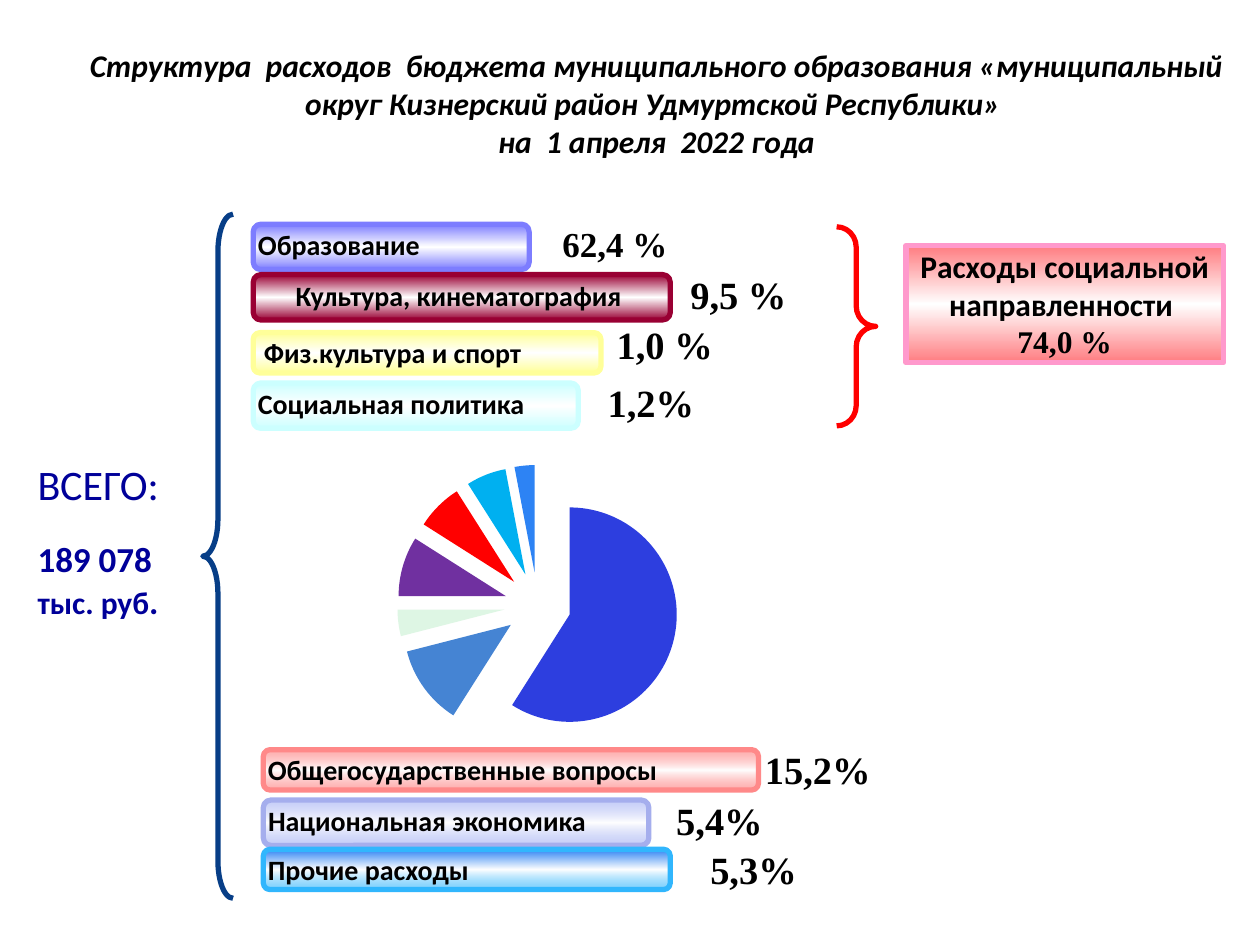
from lxml import etree
from pptx import Presentation
from pptx.chart.data import CategoryChartData
from pptx.dml.color import RGBColor
from pptx.enum.chart import XL_CHART_TYPE
from pptx.enum.shapes import MSO_SHAPE
from pptx.enum.text import MSO_ANCHOR, PP_ALIGN
from pptx.oxml import parse_xml
from pptx.oxml.ns import nsdecls, qn
from pptx.util import Inches, Pt

PIE = XL_CHART_TYPE.PIE
ROUNDED, RECTANGLE, BRACE = MSO_SHAPE.ROUNDED_RECTANGLE, MSO_SHAPE.RECTANGLE, MSO_SHAPE.LEFT_BRACE
LEFT, CENTER = PP_ALIGN.LEFT, PP_ALIGN.CENTER
TOP, MIDDLE = MSO_ANCHOR.TOP, MSO_ANCHOR.MIDDLE
SANS, SERIF = "Calibri", "Times New Roman"
BLACK, NAVY = "000000", "000099"

TITLE = ("Структура  расходов  бюджета муниципального образования «муниципальный округ "
         "Кизнерский район Удмуртской Республики» \vна  1 апреля  2022 года")

SLICES = [(59, "2D3EDF"), (12, "4584D3"), (0, "FFFF00"), (4, "DEF6E4"),
          (9, "7030A0"), (7, "FF0000"), (6, "00B0F0"), (3, "2D83F4")]
PLOT_AREA = {"x": 0.1, "y": 0.498, "w": 0.54, "h": 0.502}

# label, box, line colour, outer gradient stops as (colour, opacity %), alignment
BARS = [
    (" Физ.культура и спорт", (2.01, 2.64, 2.76, 0.32), "FFFF99",
     [("FFFF99", 100), ("FFFF99", 100)], LEFT),
    ("Социальная политика", (2.01, 3.04, 2.58, 0.36), "CCFFFF",
     [("CCFFFF", 100), ("CCFFFF", 100)], LEFT),
    ("Образование", (2.01, 1.78, 2.19, 0.36), "7D7DFF",
     [("7D7DFF", 100), ("7D7DFF", 100)], LEFT),
    ("Культура, кинематография ", (2.01, 2.18, 3.31, 0.36), "990033",
     [("990033", 100), ("990033", 100)], CENTER),
    ("Общегосударственные вопросы", (2.09, 5.95, 3.93, 0.32), "FF8989",
     [("FF7D7D", 63), ("FF7D7D", 63)], LEFT),
    ("Национальная экономика", (2.09, 6.35, 3.06, 0.36), "A5AEED",
     [("A4B1F4", 63), ("A4B1F4", 63)], LEFT),
    ("Прочие расходы", (2.09, 6.74, 3.23, 0.32), "31B6FD",
     [("2D83F4", 100), ("31B6FD", 63)], LEFT),
]

# text, box, size
SHARES = [
    ("62,4 %", (4.37, 1.62, 1.02, 0.63), 20),
    ("9,5 %", (4.92, 2.18, 1.88, 0.31), 22),
    ("1,0 %", (4.84, 2.58, 0.87, 0.31), 22),
    ("1,2%", (4.69, 3.04, 0.95, 0.31), 22),
    ("15,2%", (6.02, 5.95, 0.94, 0.31), 22),
    ("5,4%", (5.16, 6.35, 1.1, 0.31), 22),
    ("5,3%", (5.47, 6.74, 1.02, 0.31), 22),
]

# box, curve adjustment, rotation, colour
BRACES = [
    ((6.64, 1.8, 0.31, 1.58), 0.52, 180, "FF0000"),
    ((1.61, 1.7, 0.24, 5.43), 1.23, 0, "073E87"),
]


def color(value):
    return RGBColor.from_string(value)


def inches(box):
    return [Inches(value) for value in box]


def style(font, size, name=SANS, fill=BLACK, bold=True, italic=False):
    font.size, font.name, font.bold, font.italic = Pt(size), name, bold, italic
    font.color.rgb = color(fill)


def write(shape, text, size, align=LEFT, anchor=TOP, margins=(0.1, 0.05), wrap=True, **look):
    """Fill a shape with text, one paragraph per line, in a single look."""
    frame = shape.text_frame
    frame.text = text
    frame.word_wrap = wrap
    frame.vertical_anchor = anchor
    frame.margin_left = frame.margin_right = Inches(margins[0])
    frame.margin_top = frame.margin_bottom = Inches(margins[1])
    for paragraph in frame.paragraphs:
        paragraph.alignment = align
        for run in paragraph.runs:
            style(run.font, size, **look)
    return frame


def add_outlined(slide, kind, box, line):
    shape = slide.shapes.add_shape(kind, *inches(box))
    shape.shadow.inherit = False
    shape.line.color.rgb = color(line)
    shape.line.width = Pt(3)
    return shape


def fill_gradient(shape, outer):
    """Vertical gradient with white between the two outer stops."""
    first, last = outer
    gradient = parse_xml(f'<a:gradFill {nsdecls("a")} rotWithShape="1"><a:gsLst/>'
                         '<a:lin ang="5400000" scaled="1"/></a:gradFill>')
    for position, (value, opacity) in zip((0, 50, 100), (first, ("FFFFFF", 100), last)):
        stop = etree.SubElement(gradient[0], qn("a:gs"), pos=str(position * 1000))
        stop_color = etree.SubElement(stop, qn("a:srgbClr"), val=value)
        if opacity < 100:
            etree.SubElement(stop_color, qn("a:alpha"), val=str(opacity * 1000))
    shape._element.spPr.find(qn("a:prstGeom")).addnext(gradient)


def add_pie(slide):
    data = CategoryChartData()
    data.categories = [str(number + 1) for number in range(len(SLICES))]
    data.add_series("Series 1", [value for value, _ in SLICES])
    chart = slide.shapes.add_chart(PIE, *inches((1.8, 1.48, 6.67, 4.44)), data).chart
    chart.has_legend = chart.has_title = False
    style(chart.font, 18, bold=False)
    plot = chart.plots[0]
    plot.vary_by_categories = True
    series = plot.series[0]
    for index, (_, fill) in enumerate(SLICES):
        point_fill = series.points[index].format.fill
        point_fill.solid()
        point_fill.fore_color.rgb = color(fill)
    explosion = parse_xml(f'<c:explosion {nsdecls("c")} val="31"/>')
    series._element.find(qn("c:dPt")).addprevious(explosion)

    plot_area = chart._chartSpace.chart.plotArea
    for old_layout in plot_area.findall(qn("c:layout")):
        plot_area.remove(old_layout)
    layout = parse_xml(f'<c:layout {nsdecls("c")}><c:manualLayout>'
                       '<c:layoutTarget val="inner"/><c:xMode val="edge"/><c:yMode val="edge"/>'
                       '</c:manualLayout></c:layout>')
    for key, value in PLOT_AREA.items():
        etree.SubElement(layout[0], qn(f"c:{key}"), val=str(value))
    plot_area.insert(0, layout)


def main():
    presentation = Presentation()
    presentation.slide_width, presentation.slide_height = Inches(10), Inches(7.5)
    slide = presentation.slides.add_slide(presentation.slide_layouts[6])

    def add_text(box, *args, **options):
        return write(slide.shapes.add_textbox(*inches(box)), *args, **options)

    add_pie(slide)
    add_text((0.42, 0.28, 9.58, 1.07), TITLE, 18, CENTER, MIDDLE, italic=True)

    for label, box, line, outer, align in BARS:
        bar = add_outlined(slide, ROUNDED, box, line)
        fill_gradient(bar, outer)
        write(bar, label, 16, align, margins=(0.02, 0.01))

    for text, box, size in SHARES:
        add_text(box, text, size, CENTER, MIDDLE, (0.02, 0.02), name=SERIF)

    for box, curve, rotation, line in BRACES:
        brace = add_outlined(slide, BRACE, box, line)
        brace.fill.background()
        brace.adjustments[0] = curve
        brace.rotation = rotation

    social = add_outlined(slide, RECTANGLE, (7.19, 1.95, 2.52, 0.93), "FF99CC")
    fill_gradient(social, [("FF7C80", 100), ("FF7C80", 100)])
    frame = write(social, "Расходы социальной направленности \n74,0 %", 18, CENTER,
                  margins=(0.02, 0.01))
    frame.paragraphs[1].runs[0].font.name = SERIF

    add_text((0.2, 3.59, 1.5, 0.5), "ВСЕГО:", 24, fill=NAVY, bold=False)
    total = add_text((0.2, 4.22, 1.24, 0.77), "189 078\nтыс. руб", 20, wrap=False, fill=NAVY)
    unit = total.paragraphs[1]
    unit.runs[0].font.size = Pt(18)
    period = unit.add_run()
    period.text = "."
    style(period.font, 20, fill=NAVY)

    presentation.save("out.pptx")


if __name__ == "__main__":
    main()
